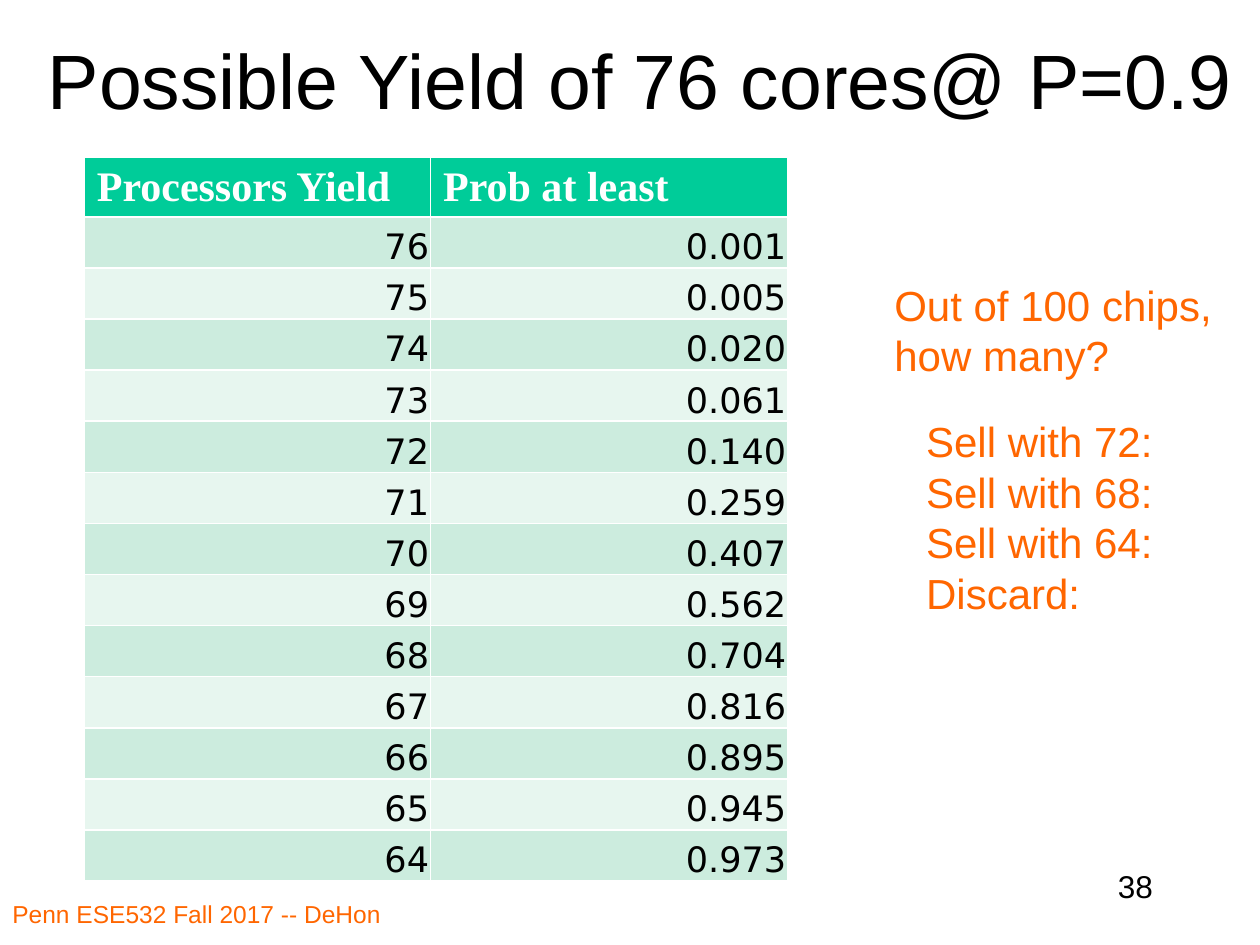
"""Builds the slide on the possible yield of 76 cores."""
from pptx import Presentation
from pptx import util as u
from pptx.dml.color import RGBColor
from pptx.enum import text as t

TITLE = "Possible Yield of 76 cores@ P=0.9"
HEADS = ("Processors Yield", "Prob at least")
PROBS = ("0.001", "0.005", "0.020", "0.061", "0.140", "0.259", "0.407",
         "0.562", "0.704", "0.816", "0.895", "0.945", "0.973")
TOP = 76
ROWS = [HEADS] + [(str(TOP - i), prob) for i, prob in enumerate(PROBS)]
WIDTHS = (6.98, 7.2)
HIGH = 1.03
BLACK, WHITE, ORANGE = "000000", "FFFFFF", "FF6600"
GREEN, BANDS = "00CC99", ("E7F6EF", "CCECDE")
LEFT, RIGHT, MID = t.PP_ALIGN.LEFT, t.PP_ALIGN.RIGHT, t.PP_ALIGN.CENTER
NOTES = (
    ("Penn ESE532 Fall 2017 -- DeHon", (0, 17.99, 10.37, 1.06), 14, ORANGE, LEFT, True),
    ("38", (18.2, 17.36, 5.29, 1.27), 18, BLACK, RIGHT, True),
    ("Out of 100 chips,\vhow many?", (17.78, 5.5, 6.99, 2.31), 24, ORANGE, LEFT, False),
    ("Sell with 72:\nSell with 68:\nSell with 64:\nDiscard:",
     (18.42, 8.26, 5.13, 4.37), 24, ORANGE, LEFT, False),
)


def paint(color):
    return RGBColor.from_string(color)


def write(frame, words, size, color, align, font="Arial", bold=False):
    frame.text = words
    for para in frame.paragraphs:
        para.alignment = align
        for run in para.runs:
            run.font.size = u.Pt(size)
            run.font.name = font
            run.font.bold = bold
            run.font.color.rgb = paint(color)


def add_title(slide):
    title = slide.shapes.title
    title.left, title.top = u.Cm(0.43), u.Cm(0)
    title.width, title.height = u.Cm(24.97), u.Cm(3.18)
    frame = title.text_frame
    frame.word_wrap = True
    frame.vertical_anchor = t.MSO_ANCHOR.MIDDLE
    write(frame, TITLE, 44, BLACK, MID)


def add_grid(slide):
    grid = slide.shapes.add_table(
        len(ROWS), len(WIDTHS), u.Cm(1.7), u.Cm(3.18),
        u.Cm(sum(WIDTHS)), u.Cm(HIGH * len(ROWS))).table
    for col, width in zip(grid.columns, WIDTHS):
        col.width = u.Cm(width)
    for r, row in enumerate(ROWS):
        grid.rows[r].height = u.Cm(HIGH)
        for c, words in enumerate(row):
            cell = grid.cell(r, c)
            cell.fill.solid()
            cell.fill.fore_color.rgb = paint(BANDS[r % 2] if r else GREEN)
            if r == 0:
                write(cell.text_frame, words, 24, WHITE, LEFT, "Times New Roman", True)
                continue
            cell.vertical_anchor = t.MSO_ANCHOR.BOTTOM
            cell.margin_left = cell.margin_right = cell.margin_top = u.Cm(0.03)
            cell.margin_bottom = 0
            write(cell.text_frame, words, 20, BLACK, RIGHT, "DejaVu Sans")


def add_notes(slide):
    for words, place, size, color, align, wrap in NOTES:
        frame = slide.shapes.add_textbox(*map(u.Cm, place)).text_frame
        frame.word_wrap = wrap
        if not wrap:
            frame.auto_size = t.MSO_AUTO_SIZE.SHAPE_TO_FIT_TEXT
        write(frame, words, size, color, align)


def main():
    deck = Presentation()
    deck.slide_width, deck.slide_height = u.Cm(25.4), u.Cm(19.05)
    slide = deck.slides.add_slide(deck.slide_layouts[5])
    add_title(slide)
    add_grid(slide)
    add_notes(slide)
    deck.save("out.pptx")


if __name__ == "__main__":
    main()
